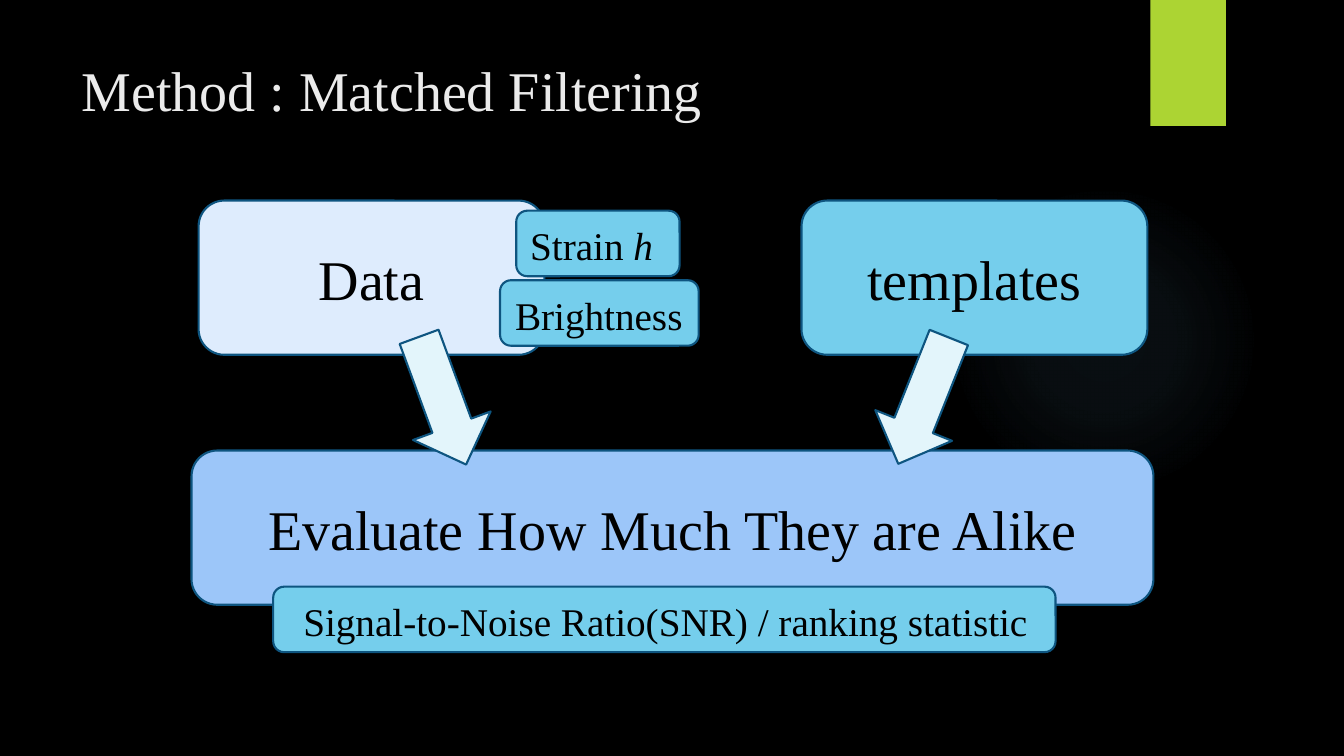
from lxml import etree
from pptx import Presentation
from pptx.dml.color import RGBColor
from pptx.enum.shapes import MSO_SHAPE
from pptx.enum.text import MSO_ANCHOR, PP_ALIGN
from pptx.oxml import parse_xml
from pptx.oxml.ns import nsdecls, qn
from pptx.util import Inches, Pt

ROUND, ARROW = MSO_SHAPE.ROUNDED_RECTANGLE, MSO_SHAPE.DOWN_ARROW
OVAL, RECT = MSO_SHAPE.OVAL, MSO_SHAPE.RECTANGLE
TOP, MIDDLE = MSO_ANCHOR.TOP, MSO_ANCHOR.MIDDLE
LEFT, CENTER = PP_ALIGN.LEFT, PP_ALIGN.CENTER

BLACK = RGBColor(0x00, 0x00, 0x00)
WHITE = RGBColor(0xEB, 0xEB, 0xEB)
GREEN = RGBColor(0xAC, 0xD4, 0x33)
NAVY = RGBColor(0x0E, 0x55, 0x80)
SKY = RGBColor(0x75, 0xCE, 0xEC)
BLUE = RGBColor(0x9C, 0xC6, 0xF9)
PALE = RGBColor(0xDE, 0xEC, 0xFD)
ICE = RGBColor(0xE3, 0xF5, 0xFB)


def add_block(shapes, kind, box, color, line=NAVY):
    block = shapes.add_shape(kind, *map(Inches, box))
    block.shadow.inherit = False
    block.fill.solid()
    block.fill.fore_color.rgb = color
    if line is None:
        block.line.fill.background()
    else:
        block.line.color.rgb = line
        block.line.width = Pt(1.5)
    return block


def write(frame, text, size, color=BLACK, align=LEFT, anchor=TOP, slant=""):
    """Fill a text frame with text, followed by an optional italic run."""
    frame.word_wrap = True
    frame.vertical_anchor = anchor
    para = frame.paragraphs[0]
    para.alignment = align
    for part, italic in ((text, False), (slant, True)):
        if part:
            run = para.add_run()
            run.text = part
            run.font.name = "Times New Roman"
            run.font.size = Pt(size)
            run.font.color.rgb = color
            run.font.italic = italic


deck = Presentation()
deck.slide_width, deck.slide_height = Inches(13.33), Inches(7.5)
slide = deck.slides.add_slide(deck.slide_layouts[5])
slide.background.fill.solid()
slide.background.fill.fore_color.rgb = BLACK
shapes = slide.shapes

# Title
title = shapes.title
title.left, title.top = Inches(0.71), Inches(0.5)
title.width, title.height = Inches(11.05), Inches(1.53)
write(title.text_frame, "Method : Matched Filtering", 40, WHITE)

# Soft glow and green tab
glow = add_block(shapes, OVAL, (9.41, 1.83, 3.08, 3.08), SKY, None)
stops = "".join(
    f'<a:gs pos="{pos}000"><a:srgbClr val="7AC4F0">'
    f'<a:alpha val="{alpha}000"/></a:srgbClr></a:gs>'
    for pos, alpha in ((0, 7), (36, 6), (69, 0))
)
solid = glow.element.spPr.find(qn("a:solidFill"))
solid.getparent().replace(solid, parse_xml(
    f'<a:gradFill {nsdecls("a")}><a:gsLst>{stops}</a:gsLst>'
    '<a:path path="circle"><a:fillToRect l="50000" t="50000" '
    'r="50000" b="50000"/></a:path></a:gradFill>'
))

tab = add_block(shapes, RECT, (11.41, 0, 0.75, 1.25), GREEN, None)
shade = etree.SubElement(
    tab.element.spPr.find(qn("a:effectLst")), qn("a:outerShdw"),
    blurRad=str(Pt(3)), dist=str(Pt(2)), dir="5400000", rotWithShape="0",
)
tint = etree.SubElement(shade, qn("a:srgbClr"), val="000000")
etree.SubElement(tint, qn("a:alpha"), val="45000")

# Main boxes
for text, left, top, width, color in (
    ("templates", 7.95, 1.99, 3.43, SKY),
    ("Evaluate How Much They are Alike", 1.9, 4.47, 9.54, BLUE),
    ("Data", 1.97, 1.99, 3.43, PALE),
):
    block = add_block(shapes, ROUND, (left, top, width, 1.53), color)
    write(block.text_frame, text, 40, align=CENTER, anchor=MIDDLE)

# Arrows into the evaluation box
for left, turn in ((3.98, -20.2), (8.75, 21.8)):
    arrow = add_block(shapes, ARROW, (left, 3.3, 0.82, 1.35), ICE)
    arrow.rotation = turn

# Small labels, each a plate with its text
for text, slant, left, top, width, inset in (
    ("Signal-to-Noise Ratio(SNR) / ranking statistic", "",
     2.71, 5.82, 7.76, 0.2),
    ("Strain ", "h", 5.12, 2.09, 1.62, 0.04),
    ("Brightness", "", 4.96, 2.78, 1.97, 0.05),
):
    label = shapes.add_group_shape().shapes
    add_block(label, ROUND, (left, top, width, 0.65), SKY)
    box = label.add_textbox(
        *map(Inches, (left + inset, top + 0.06, width - 0.02, 0.57)))
    write(box.text_frame, text, 28, slant=slant)

deck.save("out.pptx")
